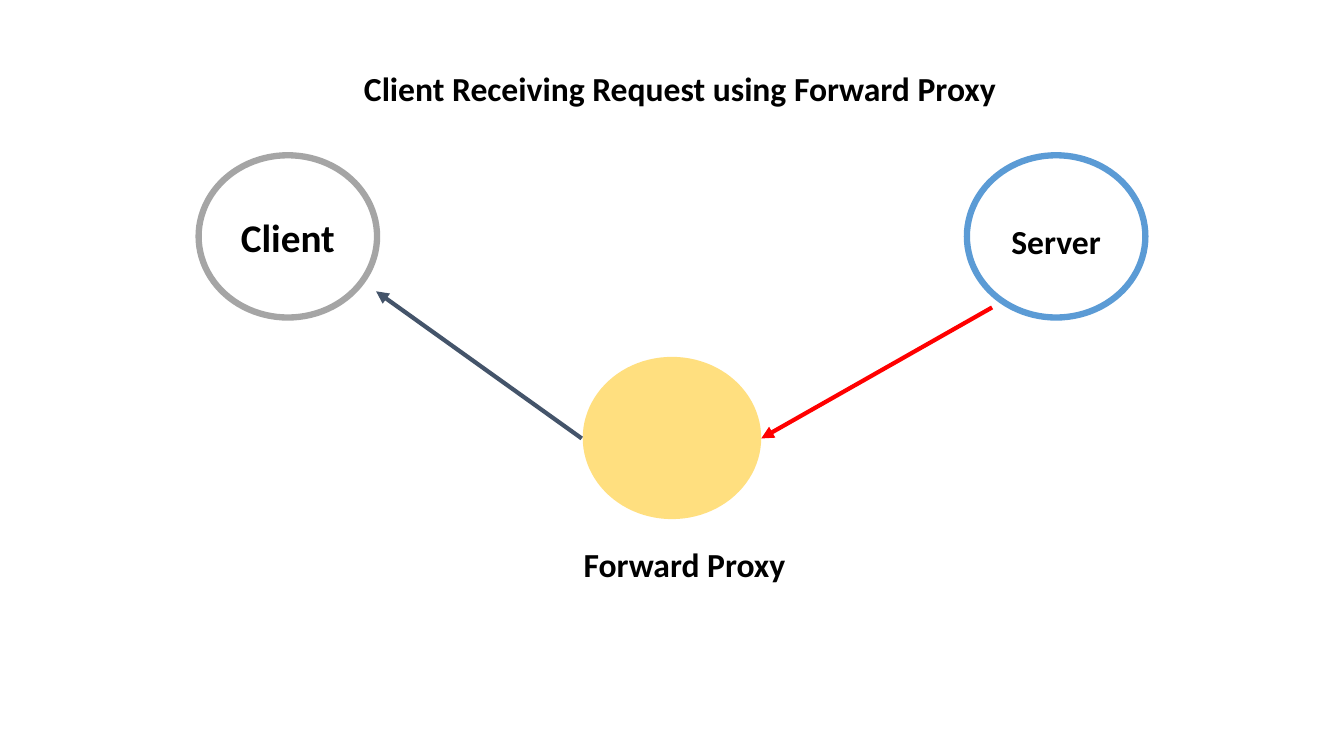
from lxml.etree import SubElement
from pptx import Presentation
from pptx.dml.color import RGBColor
from pptx.enum.shapes import MSO_CONNECTOR, MSO_SHAPE
from pptx.enum.text import MSO_ANCHOR, MSO_AUTO_SIZE, PP_ALIGN
from pptx.oxml.ns import qn
from pptx.util import Inches, Pt

COLORS = {
    "text": "000000",
    "client": "A5A5A5",
    "server": "5B9BD5",
    "proxy": "FFC000",
    "request": "FF0000",
    "response": "44546A",
}


def color(name):
    return RGBColor.from_string(COLORS[name])


def write(shape, text, size, align, anchor):
    frame = shape.text_frame
    frame.word_wrap = True
    frame.auto_size = MSO_AUTO_SIZE.NONE
    frame.vertical_anchor = anchor
    para = frame.paragraphs[0]
    para.alignment = align
    span = para.add_run()
    span.text = text
    span.font.name = "Calibri"
    span.font.size = Pt(size)
    span.font.bold = True
    span.font.color.rgb = color("text")


deck = Presentation()
deck.slide_width = Inches(13.33)
deck.slide_height = Inches(7.5)
page = deck.slides.add_slide(deck.slide_layouts[5])

title = page.shapes.title
title.left, title.top = Inches(3.51), Inches(0.62)
title.width, title.height = Inches(6.66), Inches(0.5)
write(title, "Client Receiving Request using Forward Proxy", 24, PP_ALIGN.LEFT, MSO_ANCHOR.TOP)

circles = {}
for name, left, top in [("client", 1.97, 1.54), ("server", 9.59, 1.54), ("proxy", 5.78, 3.54)]:
    circle = page.shapes.add_shape(
        MSO_SHAPE.OVAL, Inches(left), Inches(top), Inches(1.77), Inches(1.61)
    )
    circle.shadow.inherit = False
    if name == "proxy":
        circle.fill.solid()
        circle.fill.fore_color.rgb = color(name)
        circle.line.fill.background()
    else:
        circle.fill.background()
        circle.line.color.rgb = color(name)
        circle.line.width = Pt(4.5)
    circles[name] = circle

write(circles["client"], "Client", 28, PP_ALIGN.CENTER, MSO_ANCHOR.MIDDLE)
proxy_color = circles["proxy"].fill._xPr.find(qn("a:solidFill"))[0]
SubElement(proxy_color, qn("a:alpha"), val="50000")

for text, left, top, width, align in [
    ("Forward Proxy", 5.69, 5.35, 2.3, PP_ALIGN.LEFT),
    ("Server", 9.71, 2.14, 1.53, PP_ALIGN.CENTER),
]:
    box = page.shapes.add_textbox(Inches(left), Inches(top), Inches(width), Inches(0.5))
    write(box, text, 24, align, MSO_ANCHOR.TOP)

for name, start_x, start_y, end_x, end_y in [
    ("request", 9.84, 3.05, 7.55, 4.35),
    ("response", 5.77, 4.35, 3.73, 2.89),
]:
    arrow = page.shapes.add_connector(
        MSO_CONNECTOR.STRAIGHT, Inches(start_x), Inches(start_y), Inches(end_x), Inches(end_y)
    )
    arrow.line.color.rgb = color(name)
    arrow.line.width = Pt(3)
    properties = arrow._element.spPr
    SubElement(properties.find(qn("a:ln")), qn("a:tailEnd"), type="triangle")
    SubElement(properties, qn("a:effectLst"))

deck.save("out.pptx")
